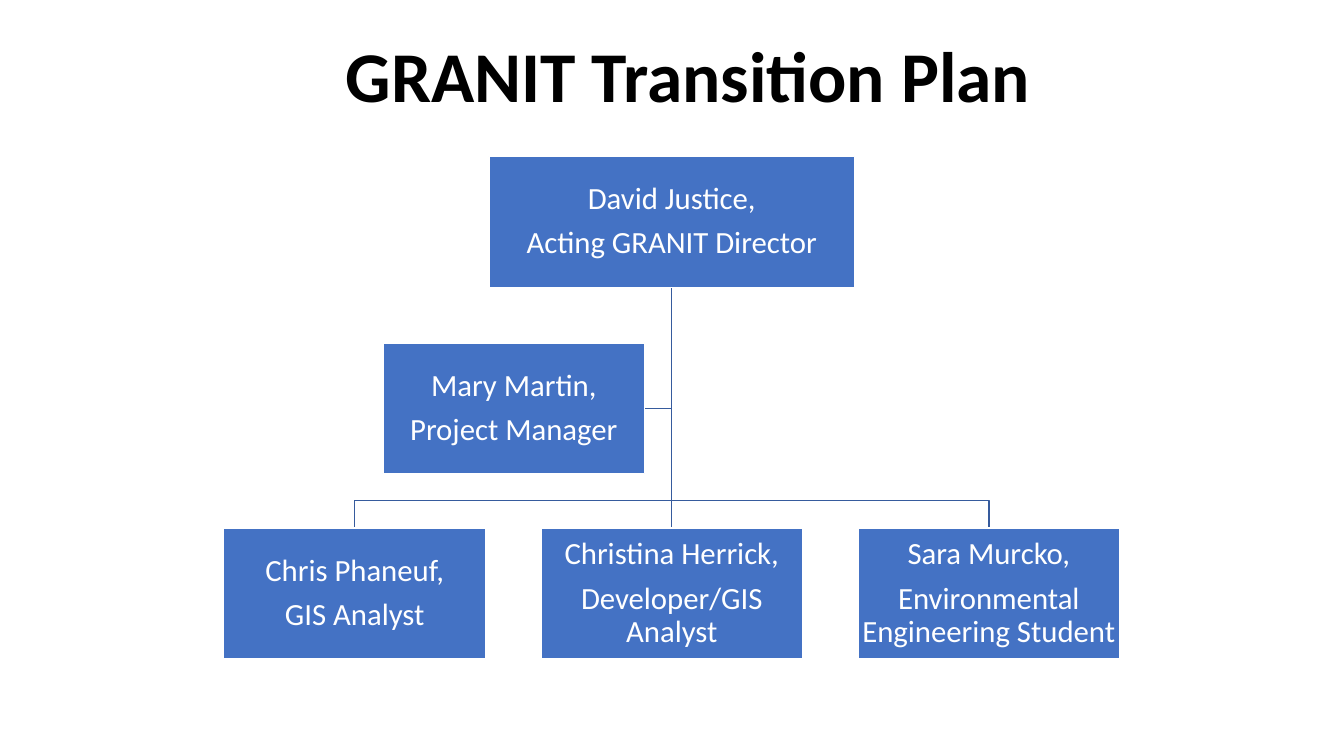
from dataclasses import dataclass

from lxml.etree import SubElement
from pptx import Presentation
from pptx.dml.color import RGBColor
from pptx.enum.shapes import MSO_CONNECTOR as Connector, MSO_SHAPE as Preset
from pptx.enum.text import MSO_ANCHOR as Anchor, PP_ALIGN as Align
from pptx.oxml.ns import qn
from pptx.util import Cm, Pt


@dataclass(frozen=True)
class Theme:
    """Colours, type sizes and font of the slide."""

    box: RGBColor = RGBColor(0x44, 0x72, 0xC4)
    link: RGBColor = RGBColor(0x36, 0x5B, 0x9D)
    light: RGBColor = RGBColor(0xFF, 0xFF, 0xFF)
    dark: RGBColor = RGBColor(0, 0, 0)
    font: str = "Calibri"
    title_size: int = 51
    box_size: int = 22
    line_width: int = 1


THEME = Theme()
CENTER = 16.93
BOX_WIDTH, DIRECTOR_WIDTH, BOX_HEIGHT = 6.6, 9.22, 3.3
DIRECTOR_TOP, MANAGER_TOP, TEAM_TOP = 3.94, 8.64, 13.31
MANAGER_LEFT = 9.65
TEAM_STEP = 7.99
BRANCH_Y = 12.62
DIRECTOR = ("David Justice,", "Acting GRANIT Director")
MANAGER = ("Mary Martin,", "Project Manager")
TEAM = (
    ("Chris Phaneuf,", "GIS Analyst"),
    ("Christina Herrick,", "Developer/GIS Analyst"),
    ("Sara Murcko,", "Environmental Engineering Student"),
)


def format_text(text_frame, size, color, bold=False, space_after=0):
    """Centre all paragraphs and give them one type style."""
    text_frame.word_wrap = True
    text_frame.vertical_anchor = Anchor.MIDDLE
    for paragraph in text_frame.paragraphs:
        paragraph.alignment = Align.CENTER
        paragraph.line_spacing = 0.9
        paragraph.space_after = Pt(space_after)
        for run in paragraph.runs:
            run.font.name = THEME.font
            run.font.size = Pt(size)
            run.font.bold = bold
            run.font.color.rgb = color


def add_title(slide, text):
    """Add the slide heading."""
    title = slide.shapes.add_textbox(Cm(4.65), Cm(0.89), Cm(25.4), Cm(2.24))
    title.text_frame.text = text
    format_text(title.text_frame, THEME.title_size, THEME.dark, bold=True)


def add_person(slide, lines, left, top, width=BOX_WIDTH):
    """Add one box of the chart with a name and a role."""
    shape = slide.shapes.add_shape(
        Preset.RECTANGLE, Cm(left), Cm(top), Cm(width), Cm(BOX_HEIGHT)
    )
    shape.shadow.inherit = False
    shape.fill.solid()
    shape.fill.fore_color.rgb = THEME.box
    shape.line.color.rgb = THEME.light
    shape.line.width = Pt(THEME.line_width)
    text_frame = shape.text_frame
    text_frame.margin_left = text_frame.margin_right = Cm(0.05)
    text_frame.margin_top = text_frame.margin_bottom = Cm(0.05)
    text_frame.text = "\n".join(lines)
    format_text(text_frame, THEME.box_size, THEME.light, space_after=7.7)


def style_link(shape):
    """Give a link its colour and width."""
    shape.line.color.rgb = THEME.link
    shape.line.width = Pt(THEME.line_width)


def add_trunk(slide, x, top, bottom):
    """Add a straight vertical link."""
    trunk = slide.shapes.add_connector(
        Connector.STRAIGHT, Cm(x), Cm(top), Cm(x), Cm(bottom)
    )
    style_link(trunk)
    SubElement(trunk.element.spPr, qn("a:effectLst"))


def add_bent_link(slide, *points):
    """Add an open link that runs through the given points."""
    start, *others = [(Cm(x), Cm(y)) for x, y in points]
    builder = slide.shapes.build_freeform(*start)
    builder.add_line_segments(others, close=False)
    link = builder.convert_to_shape()
    link.shadow.inherit = False
    link.fill.background()
    style_link(link)


def add_links(slide):
    """Link the director with the manager and the team."""
    start = (CENTER, DIRECTOR_TOP + BOX_HEIGHT)
    manager_y = MANAGER_TOP + BOX_HEIGHT / 2
    add_bent_link(
        slide, start, (CENTER, manager_y), (MANAGER_LEFT + BOX_WIDTH, manager_y)
    )
    add_trunk(slide, *start, TEAM_TOP)
    for x in (CENTER - TEAM_STEP, CENTER + TEAM_STEP):
        add_bent_link(slide, start, (CENTER, BRANCH_Y), (x, BRANCH_Y), (x, TEAM_TOP))


def main():
    """Build and save the slide."""
    presentation = Presentation()
    presentation.slide_width, presentation.slide_height = Cm(33.87), Cm(19.05)
    slide = presentation.slides.add_slide(presentation.slide_layouts[6])
    add_links(slide)
    add_person(
        slide, DIRECTOR, CENTER - DIRECTOR_WIDTH / 2, DIRECTOR_TOP, DIRECTOR_WIDTH
    )
    for index, member in enumerate(TEAM):
        left = CENTER - BOX_WIDTH / 2 + (index - 1) * TEAM_STEP
        add_person(slide, member, left, TEAM_TOP)
    add_person(slide, MANAGER, MANAGER_LEFT, MANAGER_TOP)
    add_title(slide, "GRANIT Transition Plan")
    presentation.save("out.pptx")


if __name__ == "__main__":
    main()
